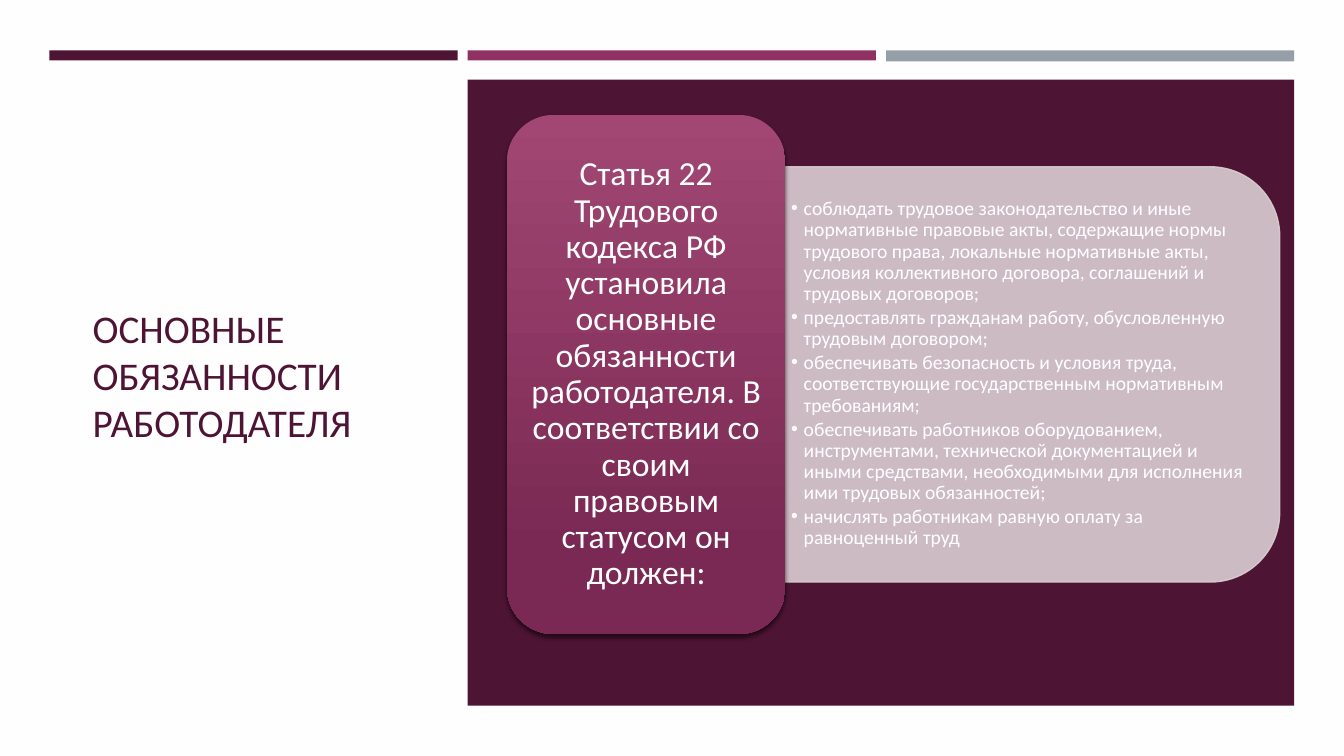
from dataclasses import dataclass

from lxml.etree import SubElement
from pptx import Presentation
from pptx.dml.color import RGBColor
from pptx.enum.shapes import MSO_SHAPE as SHAPE
from pptx.enum.text import MSO_ANCHOR as ANCHOR, MSO_AUTO_SIZE as AUTO_SIZE, PP_ALIGN as ALIGN
from pptx.oxml.ns import qn
from pptx.util import Pt

COLORS = {
    "paper": "FFFEFF",
    "plum": "4D1434",
    "berry": "903163",
    "grey": "969FA7",
    "pale": "DBCED3",
    "card_top": "A24774",
    "card_bottom": "792953",
    "white": "FFFFFF",
    "black": "000000",
}
FONT = "Calibri"
BAR_LEFT, BAR_STEP = 35.3, 298.8

TITLE = "ОСНОВНЫЕ ОБЯЗАННОСТИ РАБОТОДАТЕЛЯ"
CARD_TEXT = (
    "Статья 22 Трудового кодекса РФ установила основные обязанности работодателя. "
    "В соответствии со своим правовым статусом он должен:"
)
DUTIES = [
    "соблюдать трудовое законодательство и иные нормативные правовые акты, содержащие "
    "нормы трудового права, локальные нормативные акты, условия коллективного договора, "
    "соглашений и трудовых договоров;",
    "предоставлять гражданам работу, обусловленную трудовым договором;",
    "обеспечивать безопасность и условия труда, соответствующие государственным "
    "нормативным требованиям;",
    "обеспечивать работников оборудованием, инструментами, технической документацией и "
    "иными средствами, необходимыми для исполнения ими трудовых обязанностей;",
    "начислять работникам равную оплату за равноценный труд",
]


@dataclass(frozen=True)
class Box:
    left: float
    top: float
    width: float
    height: float


@dataclass(frozen=True)
class Block:
    box: Box
    color: str
    kind: SHAPE = SHAPE.RECTANGLE


BARS = [
    Block(Box(BAR_LEFT + i * BAR_STEP, 36, 291.6, height), color)
    for i, (color, height) in enumerate([("plum", 7.2), ("berry", 7.2), ("grey", 7.9)])
]
PANEL = Block(Box(334.1, 56.9, 590.4, 447.1), "plum")
LIST_BACK = Block(Box(589, 90.7, 296.6, 353.5), "pale", SHAPE.ROUND_2_SAME_RECTANGLE)
CARD = Block(Box(362.2, 82.1, 198.7, 370.8), "card_top", SHAPE.ROUNDED_RECTANGLE)
TITLE_BOX = Box(59, 82.1, 240.5, 370.8)
LIST_BOX = Box(560.9, 133.2, 339.1, 267.8)


def rgb(name: str) -> RGBColor:
    return RGBColor.from_string(COLORS[name])


def place(sp, box: Box) -> None:
    sp.left, sp.top = Pt(box.left), Pt(box.top)
    sp.width, sp.height = Pt(box.width), Pt(box.height)


def add_block(slide, block: Block):
    b = block.box
    sp = slide.shapes.add_shape(block.kind, Pt(b.left), Pt(b.top), Pt(b.width), Pt(b.height))
    sp.shadow.inherit = False
    sp.fill.solid()
    sp.fill.fore_color.rgb = rgb(block.color)
    sp.line.fill.background()
    return sp


def set_alpha(sp, percent: int) -> None:
    """Make every solid colour of the shape, line included, partly transparent."""
    for clr in sp._element.spPr.iter(qn("a:srgbClr")):
        SubElement(clr, qn("a:alpha"), val=str(percent * 1000))


def add_shadow(sp, blur: float, dist: float, alpha: int) -> None:
    """Cast a black shadow straight down."""
    effects = sp._element.spPr.find(qn("a:effectLst"))
    shadow = SubElement(effects, qn("a:outerShdw"), blurRad=str(Pt(blur)), dist=str(Pt(dist)),
                        dir="5400000", algn="ctr", rotWithShape="0")
    clr = SubElement(shadow, qn("a:srgbClr"), val=COLORS["black"])
    SubElement(clr, qn("a:alpha"), val=str(alpha * 1000))


def add_bullet(p, indent: float) -> None:
    pPr = p._p.get_or_add_pPr()
    pPr.set("marL", str(Pt(indent)))
    pPr.set("indent", str(-Pt(indent)))
    SubElement(pPr, qn("a:buChar"), char="•")


def write(sp, *texts: str, size: float, color: str = "white", align: ALIGN = ALIGN.LEFT,
          spacing: float = 0.9, after: float = 0, indent: float = 0,
          margins: tuple[float, float] = (7.2, 3.6)) -> None:
    """Fill the shape with one paragraph per text; an indent makes them bullets."""
    tf = sp.text_frame
    tf.word_wrap = True
    tf.auto_size = AUTO_SIZE.NONE
    tf.vertical_anchor = ANCHOR.MIDDLE
    tf.margin_left = tf.margin_right = Pt(margins[0])
    tf.margin_top = tf.margin_bottom = Pt(margins[1])
    for i, text in enumerate(texts):
        p = tf.add_paragraph() if i else tf.paragraphs[0]
        p.alignment = align
        p.line_spacing = spacing
        p.space_before, p.space_after = Pt(0), Pt(after)
        if indent:
            add_bullet(p, indent)
        r = p.add_run()
        r.text = text
        r.font.name, r.font.size = FONT, Pt(size)
        r.font.color.rgb = rgb(color)


def main() -> None:
    prs = Presentation()
    prs.slide_width, prs.slide_height = Pt(960), Pt(540)
    slide = prs.slides.add_slide(prs.slide_layouts[1])
    slide.background.fill.solid()
    slide.background.fill.fore_color.rgb = rgb("paper")

    title, duties = slide.placeholders
    place(title, TITLE_BOX)
    write(title, TITLE, size=28, color="plum", spacing=1)

    for block in [*BARS, PANEL]:
        add_block(slide, block)

    back = add_block(slide, LIST_BACK)
    back.rotation = 90
    back.line.color.rgb = rgb("pale")
    back.line.width = Pt(1)
    set_alpha(back, 90)

    place(duties, LIST_BOX)
    write(duties, *DUTIES, size=14, after=2, indent=9, margins=(4.2, 2.1))
    back._element.addnext(duties._element)

    card = add_block(slide, CARD)
    card.fill.gradient()
    card.fill.gradient_angle = 270
    stops = [(0, "card_top"), (0.84, "card_bottom")]
    for stop, (position, color) in zip(card.fill.gradient_stops, stops):
        stop.position = position
        stop.color.rgb = rgb(color)
    add_shadow(card, blur=3, dist=2, alpha=55)
    write(card, CARD_TEXT, size=24, align=ALIGN.CENTER)

    prs.save("out.pptx")


if __name__ == "__main__":
    main()
